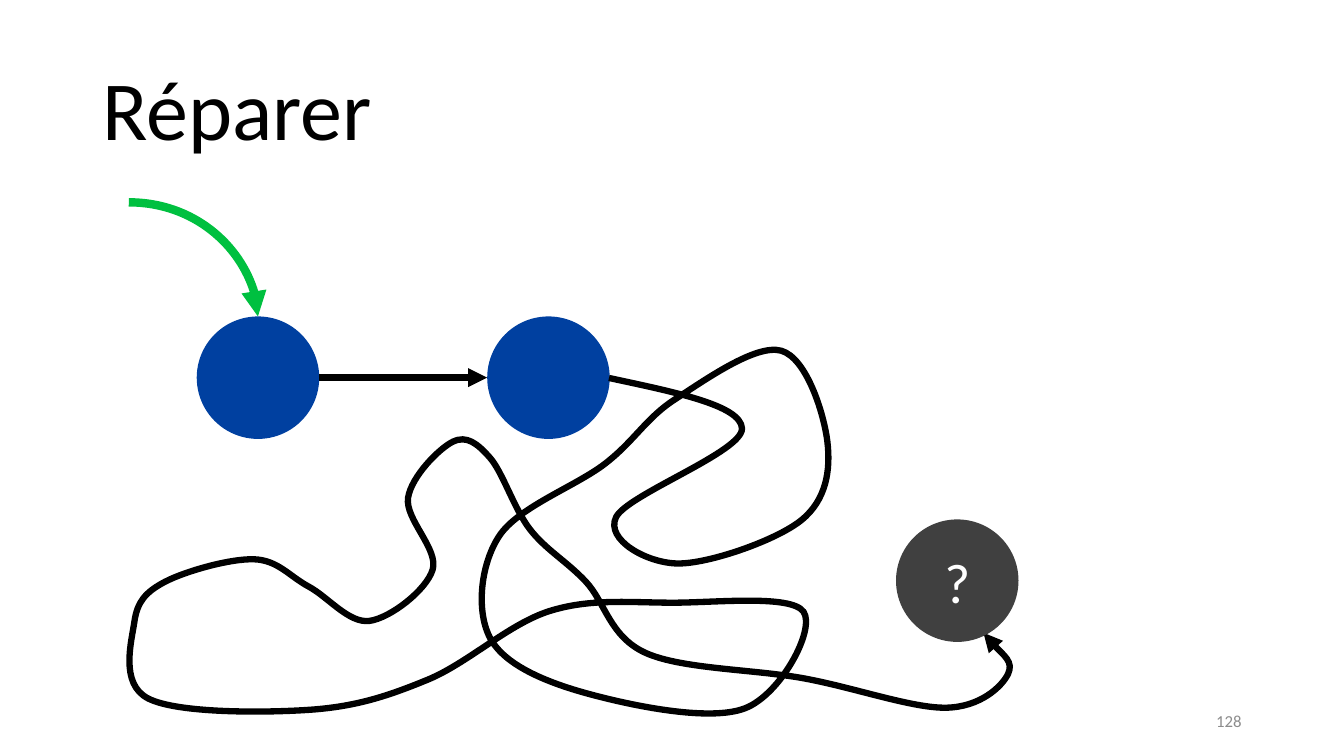
from lxml import etree
from pptx import Presentation
from pptx.dml.color import RGBColor
from pptx.enum.shapes import MSO_CONNECTOR, MSO_SHAPE
from pptx.enum.text import MSO_ANCHOR, PP_ALIGN
from pptx.oxml.ns import qn
from pptx.util import Pt

STRAIGHT, CURVE = MSO_CONNECTOR.STRAIGHT, MSO_CONNECTOR.CURVE
OVAL = MSO_SHAPE.OVAL
MIDDLE = MSO_ANCHOR.MIDDLE
LEFT, CENTER, RIGHT = PP_ALIGN.LEFT, PP_ALIGN.CENTER, PP_ALIGN.RIGHT

BLACK = RGBColor(0x00, 0x00, 0x00)
WHITE = RGBColor(0xFF, 0xFF, 0xFF)
GREY = RGBColor(0x8C, 0x8C, 0x8C)
DARK = RGBColor(0x40, 0x40, 0x40)
BLUE = RGBColor(0x00, 0x40, 0xA0)
GREEN = RGBColor(0x00, 0xC0, 0x40)

TITLE_FONT = {"name": "Calibri", "size": Pt(60)}
NUMBER_FONT = {"name": "Calibri", "size": Pt(12)}
MARK_FONT = {"name": "Calibri", "size": Pt(40)}

NODE_SIZE = 87.5

# Points the tangled link passes through, relative to its box
TANGLE = [
    (343, 20), (438, 56), (348, 119.5), (392, 152.5), (480.5, 121.5),
    (499, 65.5), (466, 0.5), (390.5, 35), (340.5, 81), (264.5, 133),
    (258.5, 206.5), (328, 245.5), (440, 256), (482, 187), (388, 180.5),
    (300.5, 186.5), (213.5, 235.5), (129, 257), (14, 249), (4, 194),
    (26, 165.5), (89.5, 149.5), (128.5, 169), (172, 193.5), (217, 157),
    (199.5, 105.5), (231.5, 65.5), (258, 77), (286.5, 128), (326.5, 165.5),
    (369.5, 216.5), (482, 234.5), (584, 255.5), (628, 231.5), (610.5, 202),
]
# Offset from the first point that sets the starting direction
LEAD_IN = (-186, -24.5)


def write(text_frame, text, font, color, align):
    text_frame.word_wrap = True
    text_frame.vertical_anchor = MIDDLE
    paragraph = text_frame.paragraphs[0]
    paragraph.text = text
    paragraph.alignment = align
    for attribute, value in font.items():
        setattr(paragraph.font, attribute, value)
    paragraph.font.color.rgb = color
    return paragraph


def add_label(slide, box, text, font, color, align):
    label = slide.shapes.add_textbox(*map(Pt, box))
    return write(label.text_frame, text, font, color, align)


def add_node(slide, left, top, color, mark=None):
    node = slide.shapes.add_shape(
        OVAL, Pt(left), Pt(top), Pt(NODE_SIZE), Pt(NODE_SIZE))
    node.shadow.inherit = False
    node.fill.solid()
    node.fill.fore_color.rgb = color
    node.line.fill.background()
    if mark:
        write(node.text_frame, mark, MARK_FONT, WHITE, CENTER)


def style_arrow(arrow, color, width):
    arrow.line.color.rgb = color
    arrow.line.width = Pt(width)
    outline = arrow.element.spPr.find(qn("a:ln"))
    etree.SubElement(outline, qn("a:tailEnd"), type="triangle")


def add_arrow(slide, kind, start, end, color, width):
    arrow = slide.shapes.add_connector(kind, *map(Pt, (*start, *end)))
    style_arrow(arrow, color, width)
    properties = arrow.element.spPr
    etree.SubElement(properties, qn("a:effectLst"))
    if kind == CURVE:  # a single bend: leaves sideways, arrives downwards
        properties.find(qn("a:prstGeom")).set("prst", "curvedConnector2")


def smooth(freeform):
    """Turn the segments into curves through the same points."""
    outline = freeform.element.spPr.find(".//" + qn("a:path"))
    knots = [(int(pt.get("x")), int(pt.get("y")))
             for pt in outline.iter(qn("a:pt"))]
    lead = tuple(k + Pt(d) for k, d in zip(knots[0], LEAD_IN))
    chain = [lead, *knots, knots[-1]]
    for segment in outline.findall(qn("a:lnTo")):
        outline.remove(segment)
    for before, start, end, after in zip(chain, chain[1:], chain[2:], chain[3:]):
        leaving = [s + (e - b) / 6 for b, s, e in zip(before, start, end)]
        arriving = [e - (a - s) / 6 for s, e, a in zip(start, end, after)]
        curve = etree.SubElement(outline, qn("a:cubicBezTo"))
        for x, y in (leaving, arriving, end):
            etree.SubElement(curve, qn("a:pt"), x=str(round(x)), y=str(round(y)))


def add_tangle(slide, left, top):
    route = [(Pt(left + x), Pt(top + y)) for x, y in TANGLE]
    builder = slide.shapes.build_freeform(*route[0])
    builder.add_line_segments(route[1:], close=False)
    tangle = builder.convert_to_shape()
    tangle.shadow.inherit = False
    tangle.fill.background()
    style_arrow(tangle, BLACK, 4.5)
    smooth(tangle)


def add_linked_list(slide, left, top):
    first, second = left + 48.5, left + 256
    row = top + 81.5
    middle = row + NODE_SIZE / 2

    # Known nodes and the link between them
    for node_left in (first, second):
        add_node(slide, node_left, row, BLUE)
    add_arrow(slide, STRAIGHT, (first + NODE_SIZE, middle), (second, middle),
              BLACK, 4.5)

    # Tangled link to the unknown node
    add_tangle(slide, left, top + 105.5)
    add_node(slide, left + 548, top + 226.5, DARK, "?")

    # Entry pointer
    add_arrow(slide, CURVE, (left, top), (first + NODE_SIZE / 2, row), GREEN, 6)


def main():
    deck = Presentation()
    deck.slide_width, deck.slide_height = Pt(960), Pt(540)
    slide = deck.slides.add_slide(deck.slide_layouts[6])

    title = add_label(slide, (66, 28.8, 828, 104.4), "Réparer",
                      TITLE_FONT, BLACK, LEFT)
    title.line_spacing = 0.9
    add_label(slide, (678, 500.5, 216, 28.8), "128", NUMBER_FONT, GREY, RIGHT)
    add_linked_list(slide, 92, 144.5)

    deck.save("out.pptx")


if __name__ == "__main__":
    main()
